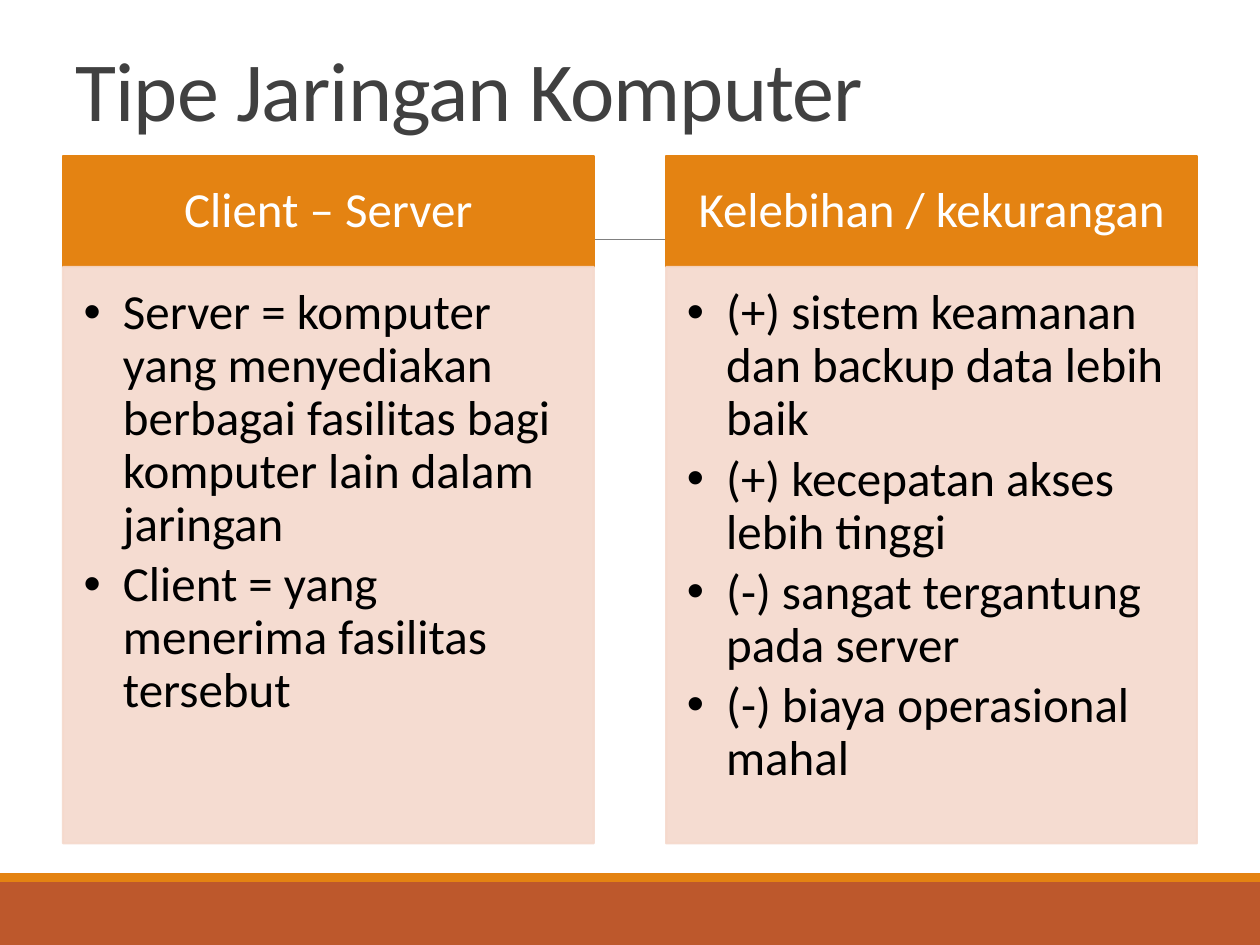
from lxml.etree import SubElement
from pptx import Presentation
from pptx.dml.color import RGBColor
from pptx.enum.shapes import MSO_CONNECTOR, MSO_SHAPE
from pptx.enum.text import MSO_ANCHOR, PP_ALIGN
from pptx.oxml.ns import qn
from pptx.util import Pt

TITLE = "Tipe Jaringan Komputer"
PANELS = [
    ("Client – Server", [
        "Server = komputer yang menyediakan berbagai fasilitas bagi komputer lain dalam jaringan",
        "Client = yang menerima fasilitas tersebut",
    ]),
    ("Kelebihan / kekurangan", [
        "(+) sistem keamanan dan backup data lebih baik",
        "(+) kecepatan akses lebih tinggi",
        "(-) sangat tergantung pada server",
        "(-) biaya operasional mahal",
    ]),
]

FONT = "Calibri"
TEXT_SIZE = 28
ORANGE = RGBColor(0xE4, 0x83, 0x12)
RUST = RGBColor(0xBD, 0x58, 0x2C)
PEACH = RGBColor(0xF5, 0xD9, 0xCC)
GRAY = RGBColor(0x80, 0x80, 0x80)
DARK = RGBColor(0x40, 0x40, 0x40)
WHITE = RGBColor(0xFF, 0xFF, 0xFF)
BLACK = RGBColor(0, 0, 0)

WIDTH, HEIGHT = 720, 540
MARGIN = 36
PANEL_WIDTH = 303.3
PANEL_STEP = WIDTH - 2 * MARGIN - PANEL_WIDTH
HEADER_TOP, HEADER_HEIGHT = 89, 63.6
BODY_HEIGHT = 329.4
FOOTER_TOP, STRIPE_HEIGHT = 504, 5
RULE_Y = 136.8
BULLET_INDENT = 22.5


def add_rectangle(slide, left, top, width, height, color, outline=False):
    shape = slide.shapes.add_shape(
        MSO_SHAPE.RECTANGLE, Pt(left), Pt(top), Pt(width), Pt(height))
    shape.shadow.inherit = False
    shape.fill.solid()
    shape.fill.fore_color.rgb = color
    if outline:
        shape.line.color.rgb = color
        shape.line.width = Pt(1.25)
    else:
        shape.line.fill.background()
    return shape


def make_translucent(shape, percent):
    """Apply the opacity to both fill and outline."""
    for color in shape._element.spPr.iter(qn("a:srgbClr")):
        SubElement(color, qn("a:alpha"), val=str(percent * 1000))


def set_frame(shape, anchor, margins):
    frame = shape.text_frame
    frame.word_wrap = True
    frame.vertical_anchor = anchor
    (frame.margin_left, frame.margin_top,
     frame.margin_right, frame.margin_bottom) = map(Pt, margins)
    return frame


def style_paragraph(paragraph, size, color, align, line_spacing):
    paragraph.alignment = align
    paragraph.line_spacing = line_spacing
    for run in paragraph.runs:
        run.font.name = FONT
        run.font.size = Pt(size)
        run.font.color.rgb = color


def add_bullet(paragraph):
    properties = paragraph._p.get_or_add_pPr()
    properties.set("marL", str(Pt(BULLET_INDENT)))
    properties.set("indent", str(-Pt(BULLET_INDENT)))
    SubElement(properties, qn("a:buFont"), typeface="Arial")
    SubElement(properties, qn("a:buChar"), char="•")


def add_background(slide):
    add_rectangle(slide, 0, FOOTER_TOP, WIDTH, HEIGHT - FOOTER_TOP, RUST)
    add_rectangle(slide, 0, FOOTER_TOP - STRIPE_HEIGHT, WIDTH, STRIPE_HEIGHT, ORANGE)
    rule = slide.shapes.add_connector(
        MSO_CONNECTOR.STRAIGHT, Pt(70.6), Pt(RULE_Y), Pt(658.8), Pt(RULE_Y))
    rule.line.color.rgb = GRAY
    rule.line.width = Pt(0.5)
    SubElement(rule._element.spPr, qn("a:effectLst"))


def add_title(slide):
    box = slide.shapes.add_textbox(
        Pt(MARGIN), Pt(21.6), Pt(WIDTH - 2 * MARGIN), Pt(61.2))
    frame = set_frame(box, MSO_ANCHOR.BOTTOM, (7.2, 3.6, 7.2, 3.6))
    frame.text = TITLE
    paragraph = frame.paragraphs[0]
    style_paragraph(paragraph, 48, DARK, PP_ALIGN.LEFT, 0.85)
    paragraph.runs[0].font._element.set("spc", "-50")


def add_panel(slide, left, heading, items):
    header = add_rectangle(
        slide, left, HEADER_TOP, PANEL_WIDTH, HEADER_HEIGHT, ORANGE, outline=True)
    frame = set_frame(header, MSO_ANCHOR.MIDDLE, (15.7, 9, 15.7, 9))
    frame.text = heading
    style_paragraph(frame.paragraphs[0], TEXT_SIZE, WHITE, PP_ALIGN.CENTER, 0.9)

    body = add_rectangle(
        slide, left, HEADER_TOP + HEADER_HEIGHT, PANEL_WIDTH, BODY_HEIGHT,
        PEACH, outline=True)
    make_translucent(body, 90)
    frame = set_frame(body, MSO_ANCHOR.TOP, (11.8, 11.8, 15.7, 17.6))
    frame.text = "\n".join(items)
    for paragraph in frame.paragraphs:
        style_paragraph(paragraph, TEXT_SIZE, BLACK, PP_ALIGN.LEFT, 0.9)
        paragraph.space_after = Pt(0.15 * TEXT_SIZE)
        add_bullet(paragraph)


def main():
    presentation = Presentation()
    presentation.slide_width, presentation.slide_height = Pt(WIDTH), Pt(HEIGHT)
    slide = presentation.slides.add_slide(presentation.slide_layouts[6])
    add_background(slide)
    add_title(slide)
    for index, (heading, items) in enumerate(PANELS):
        add_panel(slide, MARGIN + index * PANEL_STEP, heading, items)
    presentation.save("out.pptx")


if __name__ == "__main__":
    main()
